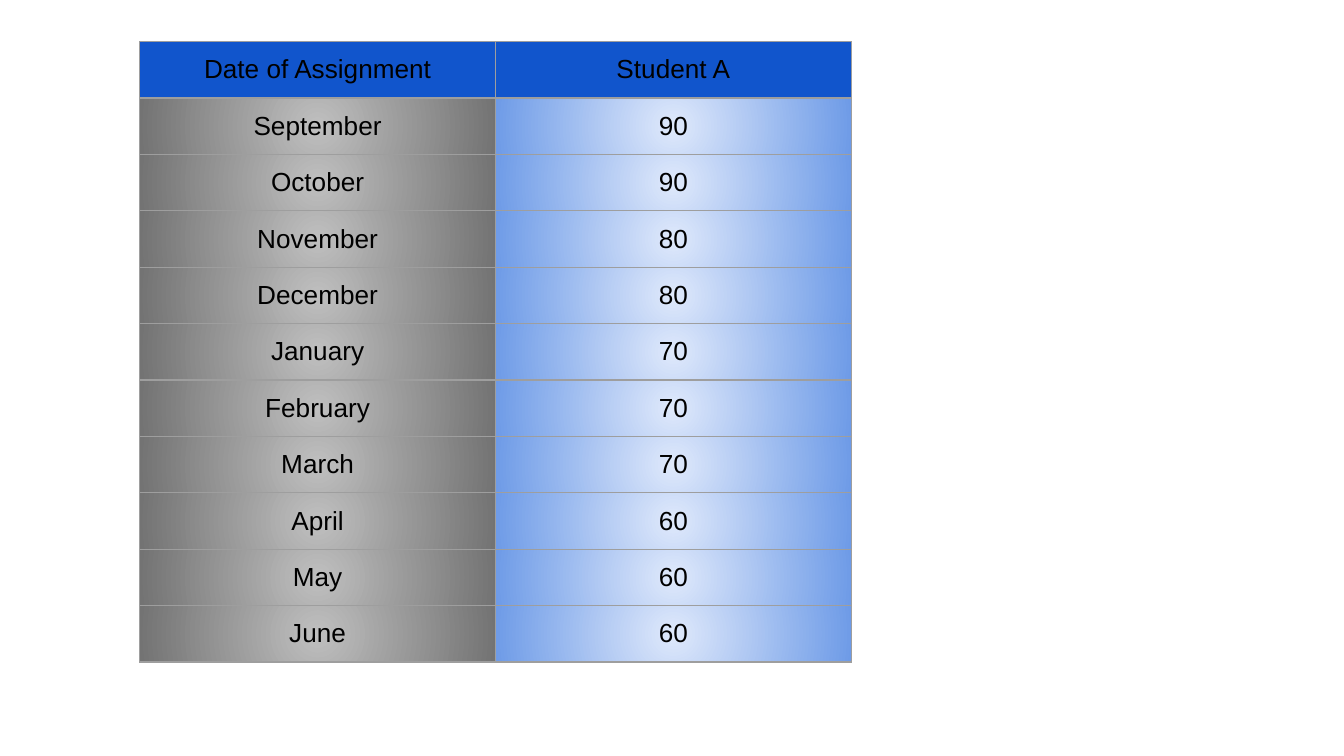
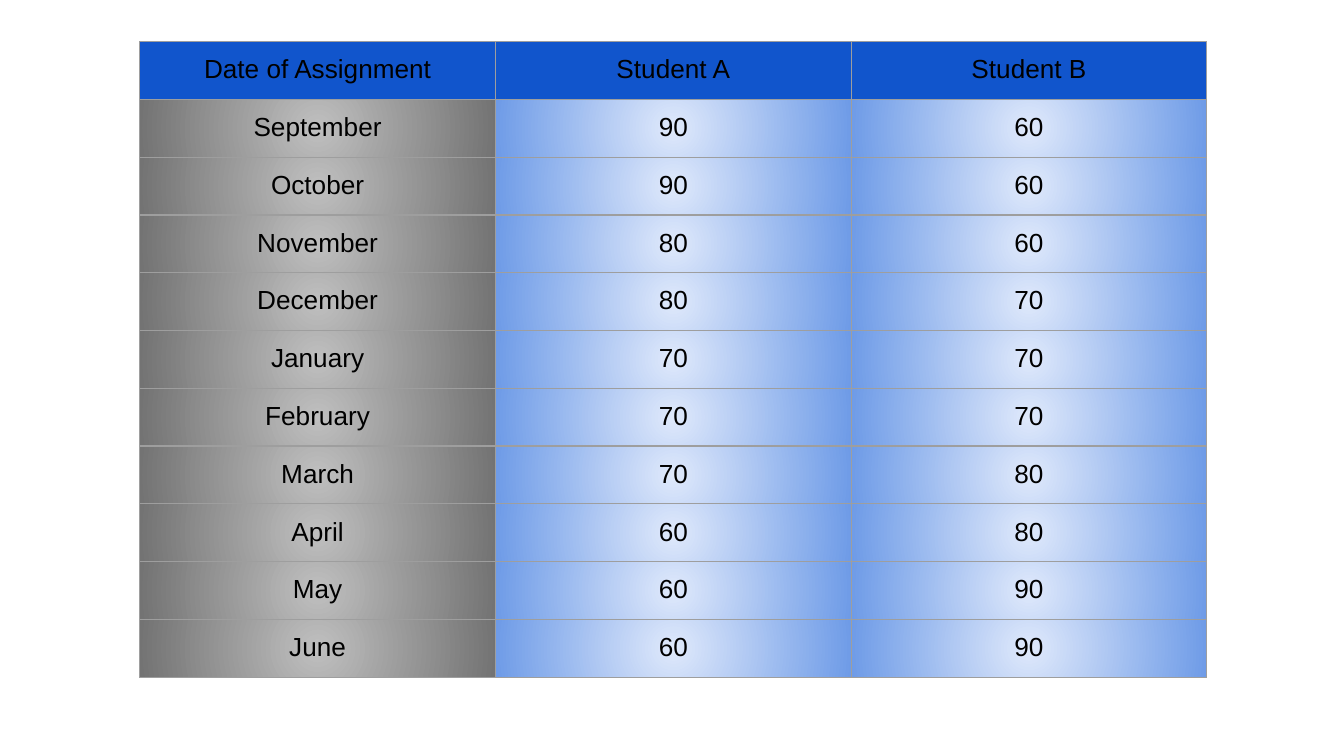
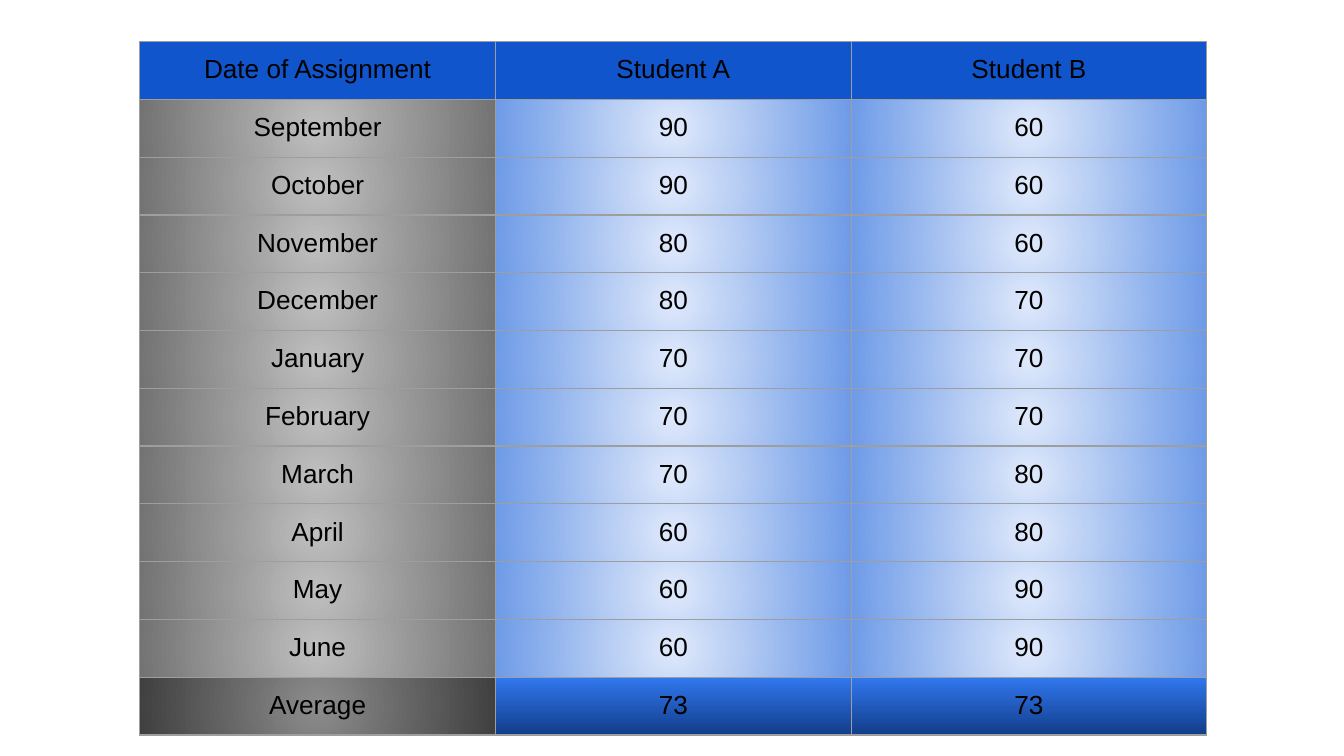
import dataclasses

import lxml.etree
import pptx
import pptx.dml.color
import pptx.enum.text
import pptx.oxml.ns
import pptx.presentation
import pptx.table
import pptx.util

RGBColor = pptx.dml.color.RGBColor
Inches = pptx.util.Inches

BLACK = RGBColor(0x00, 0x00, 0x00)
HEADER_BLUE = RGBColor(0x11, 0x55, 0xCC)
BORDER_GRAY = RGBColor(0x9E, 0x9E, 0x9E)
FONT_NAME = "Arial"
FONT_SIZE = pptx.util.Pt(14)
BORDER_WIDTH = pptx.util.Pt(0.75)
CELL_MARGIN = Inches(0.1)
SLIDE_WIDTH = Inches(10)
SLIDE_HEIGHT = SLIDE_WIDTH * 9 // 16
TABLE_LEFT = Inches(1.04)
TABLE_TOP = Inches(0.31)
COLUMN_WIDTH = Inches(7.94) // 3
BLANK_LAYOUT = 6


@dataclasses.dataclass(frozen=True)
class Gradient:
    start: RGBColor
    end: RGBColor
    radial: bool = True


MONTH_FILL = Gradient(RGBColor(0xBF, 0xBF, 0xBF), RGBColor(0x73, 0x73, 0x73))
GRADE_FILL = Gradient(RGBColor(0xDF, 0xE9, 0xFB), RGBColor(0x6E, 0x9B, 0xE7))
AVERAGE_LABEL_FILL = Gradient(RGBColor(0x8C, 0x8C, 0x8C), RGBColor(0x40, 0x40, 0x40))
AVERAGE_FILL = Gradient(RGBColor(0x31, 0x77, 0xEE), RGBColor(0x11, 0x3D, 0x8A), radial=False)

MONTHS = ["September", "October", "November", "December", "January",
          "February", "March", "April", "May", "June"]


@dataclasses.dataclass(frozen=True)
class Student:
    name: str
    grades: tuple[int, ...]

    def average(self) -> int:
        return round(sum(self.grades) / len(self.grades))


STUDENT_A = Student("Student A", (90, 90, 80, 80, 70, 70, 70, 60, 60, 60))
STUDENT_B = Student("Student B", (60, 60, 60, 70, 70, 70, 80, 80, 90, 90))


@dataclasses.dataclass(frozen=True)
class GradeSheet:
    students: tuple[Student, ...]
    row_height: pptx.util.Length
    with_average: bool = False

    def rows(self) -> list[list[str]]:
        header = ["Date of Assignment"] + [student.name for student in self.students]
        body = [
            [month] + [str(student.grades[index]) for student in self.students]
            for index, month in enumerate(MONTHS)
        ]
        averages = ["Average"] + [str(student.average()) for student in self.students]
        return [header] + body + ([averages] if self.with_average else [])


SHEETS = [
    GradeSheet((STUDENT_A,), Inches(0.42)),
    GradeSheet((STUDENT_A, STUDENT_B), Inches(0.43)),
    GradeSheet((STUDENT_A, STUDENT_B), Inches(0.43), with_average=True),
]


def add_element(parent: lxml.etree.ElementBase, tag: str, **attributes: object) -> lxml.etree.ElementBase:
    values = {name: str(value) for name, value in attributes.items()}
    return lxml.etree.SubElement(parent, pptx.oxml.ns.qn(f"a:{tag}"), values)


def add_borders(properties: lxml.etree.ElementBase) -> None:
    for side in ("lnL", "lnR", "lnT", "lnB"):
        line = add_element(properties, side, w=int(BORDER_WIDTH))
        add_element(add_element(line, "solidFill"), "srgbClr", val=BORDER_GRAY)


def add_gradient(properties: lxml.etree.ElementBase, gradient: Gradient) -> None:
    fill = add_element(properties, "gradFill", rotWithShape=1)
    stops = add_element(fill, "gsLst")
    for position, color in ((0, gradient.start), (100000, gradient.end)):
        add_element(add_element(stops, "gs", pos=position), "srgbClr", val=color)
    if gradient.radial:
        circle = add_element(fill, "path", path="circle")
        add_element(circle, "fillToRect", l=50000, t=50000, r=50000, b=50000)
    else:
        add_element(fill, "lin", ang=90 * 60000, scaled=0)


def choose_fill(row: int, column: int) -> RGBColor | Gradient:
    if row == 0:
        return HEADER_BLUE
    if row > len(MONTHS):
        return AVERAGE_FILL if column else AVERAGE_LABEL_FILL
    return GRADE_FILL if column else MONTH_FILL


def format_cell(cell: pptx.table._Cell, text: str, fill: RGBColor | Gradient) -> None:
    cell.margin_left = cell.margin_right = CELL_MARGIN
    cell.margin_top = cell.margin_bottom = CELL_MARGIN
    cell.text_frame.text = text
    para = cell.text_frame.paragraphs[0]
    para.alignment = pptx.enum.text.PP_ALIGN.CENTER
    font = para.runs[0].font
    font.name = FONT_NAME
    font.size = FONT_SIZE
    font.color.rgb = BLACK
    properties = cell._tc.get_or_add_tcPr()
    add_borders(properties)
    if isinstance(fill, Gradient):
        add_gradient(properties, fill)
    else:
        cell.fill.solid()
        cell.fill.fore_color.rgb = fill


def add_grade_slide(deck: pptx.presentation.Presentation, sheet: GradeSheet) -> None:
    page = deck.slides.add_slide(deck.slide_layouts[BLANK_LAYOUT])
    rows = sheet.rows()
    column_count = len(rows[0])
    table = page.shapes.add_table(
        len(rows), column_count, TABLE_LEFT, TABLE_TOP,
        COLUMN_WIDTH * column_count, sheet.row_height * len(rows),
    ).table
    table.first_row = False
    table.horz_banding = False
    for row_index, texts in enumerate(rows):
        for column_index, text in enumerate(texts):
            fill = choose_fill(row_index, column_index)
            format_cell(table.cell(row_index, column_index), text, fill)


def main() -> None:
    deck = pptx.Presentation()
    deck.slide_width = SLIDE_WIDTH
    deck.slide_height = SLIDE_HEIGHT
    for sheet in SHEETS:
        add_grade_slide(deck, sheet)
    deck.save("out.pptx")


if __name__ == "__main__":
    main()
